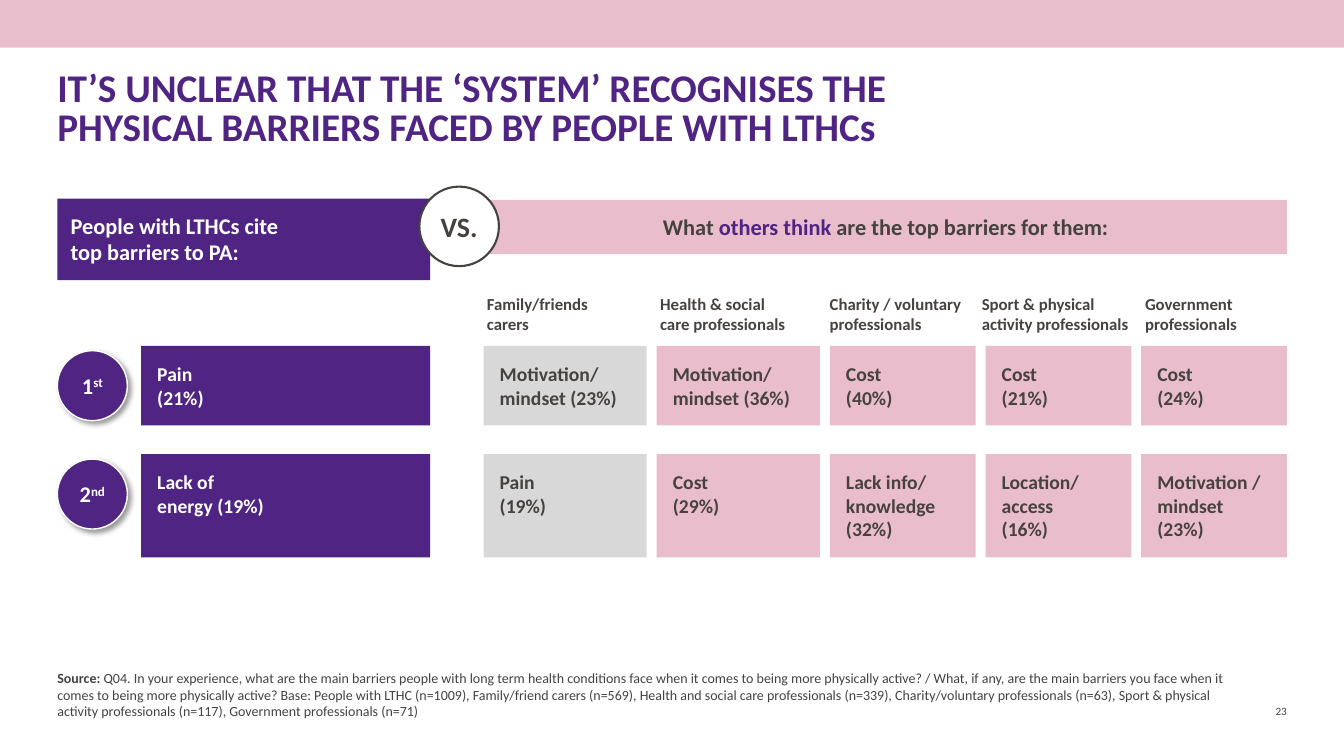
from lxml.etree import SubElement
from pptx import Presentation
from pptx.dml.color import RGBColor
from pptx.enum.shapes import MSO_SHAPE
from pptx.enum.text import MSO_ANCHOR, PP_ALIGN
from pptx.oxml.ns import qn
from pptx.util import Pt

PURPLE, PINK, BAND_PINK = "4F2483", "EABDCC", "E9BFCE"
GREY, DARK, WHITE = "D8D8D8", "464240", "FFFFFF"
FOOTER_DARK = "454341"
MARGIN, RIGHT = 41, 919.3
GAP = 7.1
COLUMNS_LEFT = 345.4
ROWS = [(247, 56.8), (324.4, 73.8)]

# heading, heading offset, heading width, column width, fill, answers.
# In text, \v is a line break and \n starts a paragraph.
COLUMNS = [
    ("Family/friends carers", 2.4, 83.5, 116.6, GREY,
     ["Motivation/ \vmindset (23%)", "Pain \v(19%)"]),
    ("Health & social \vcare professionals", 2.4, 116.6, 116.6, PINK,
     ["Motivation/ \vmindset (36%)", "Cost \v(29%)"]),
    ("Charity / voluntary professionals", -0.2, 116.6, 104.1, PINK,
     ["Cost \v(40%)", "Lack info/ knowledge (32%)"]),
    ("Sport & physical activity professionals", -2.7, 110.9, 104.1, PINK,
     ["Cost \v(21%)", "Location/\vaccess\n(16%)"]),
    ("Government professionals", 2.7, 83.5, 104.1, PINK,
     ["Cost \v(24%)", "Motivation / mindset (23%)"]),
]
RANKS = [("1", "st", "Pain \v(21%)"), ("2", "nd", "Lack of \venergy (19%)")]

SOURCE_NOTE = (
    "Q04. In your experience, what are the main barriers people with long term health "
    "conditions face when it comes to being more physically active? / What, if any, are the "
    "main barriers you face when it comes to being more physically active? Base: People with "
    "LTHC (n=1009), Family/friend carers (n=569), Health and social care professionals "
    "(n=339), Charity/voluntary professionals (n=63), Sport & physical activity professionals "
    "(n=117), Government professionals (n=71)"
)


def rgb(code):
    return RGBColor.from_string(code)


class Board:
    """The current page and the text style shared by its elements."""

    font_name = "Calibri"

    def __init__(self, page):
        self.page = page

    def set_text(self, shape, content, size, color, bold=True, align=PP_ALIGN.LEFT,
                 anchor=MSO_ANCHOR.TOP, inset=(0, 0), leading=None):
        """Fill a shape with a string, or with a list of (text, changes) spans."""
        frame = shape.text_frame
        frame.word_wrap = True
        frame.vertical_anchor = anchor
        frame.margin_left = frame.margin_right = Pt(inset[0])
        frame.margin_top = frame.margin_bottom = Pt(inset[1])
        if isinstance(content, str):
            frame.text = content
        else:
            for text, changes in content:
                self.add_span(frame.paragraphs[0], text, **changes)
        for para in frame.paragraphs:
            para.alignment = align
            para.line_spacing = leading
            font = para.font
            font.name, font.size, font.bold = self.font_name, Pt(size), bold
            font.color.rgb = rgb(color)

    def add_span(self, para, text, color=None, bold=None, raised=False):
        span = para.add_run()
        span.text = text
        span.font.bold = bold
        if color:
            span.font.color.rgb = rgb(color)
        if raised:
            span.font._element.set("baseline", "30000")

    def text(self, left, top, width, height, content, size, color, **style):
        box = self.page.shapes.add_textbox(Pt(left), Pt(top), Pt(width), Pt(height))
        self.set_text(box, content, size, color, **style)

    def shape(self, kind, left, top, width, height, fill):
        shape = self.page.shapes.add_shape(kind, Pt(left), Pt(top), Pt(width), Pt(height))
        shape.shadow.inherit = False
        shape.fill.solid()
        shape.fill.fore_color.rgb = rgb(fill)
        shape.line.fill.background()
        return shape

    def block(self, left, top, width, height, fill, content=None, size=14, color=DARK,
              **style):
        block = self.shape(MSO_SHAPE.RECTANGLE, left, top, width, height, fill)
        if content:
            self.set_text(block, content, size, color, **style)

    def circle(self, left, top, diameter, fill, outline, weight, content, size, color,
               inset, shadow=False):
        circle = self.shape(MSO_SHAPE.OVAL, left, top, diameter, diameter, fill)
        circle.line.color.rgb = rgb(outline)
        circle.line.width = Pt(weight)
        if shadow:
            self.cast_shadow(circle)
        self.set_text(circle, content, size, color, align=PP_ALIGN.CENTER,
                      anchor=MSO_ANCHOR.MIDDLE, inset=inset)

    def cast_shadow(self, shape):
        effects = shape._element.spPr.find(qn("a:effectLst"))
        outer = SubElement(effects, qn("a:outerShdw"), blurRad=str(Pt(4)), dist=str(Pt(3)),
                           dir="2700000", algn="tl", rotWithShape="0")
        tint = SubElement(outer, qn("a:srgbClr"), val="000000")
        SubElement(tint, qn("a:alpha"), val="40000")


def main():
    deck = Presentation()
    deck.slide_width, deck.slide_height = Pt(960), Pt(540)
    board = Board(deck.slides.add_slide(deck.slide_layouts[6]))

    board.block(0, 0, 960, 34, BAND_PINK)
    board.text(MARGIN, 51, 878, 57,
               "IT’S UNCLEAR THAT THE ‘SYSTEM’ RECOGNISES THE \v"
               "PHYSICAL BARRIERS FACED BY PEOPLE WITH LTHCs",
               28, PURPLE, leading=Pt(28))

    board.block(MARGIN, 141.8, 266.2, 58.3, PURPLE,
                "People with LTHCs cite \vtop barriers to PA:", 16, WHITE, inset=(9.4, 9.4))
    board.block(346, 142.7, RIGHT - 346, 38.8, PINK,
                [("What ", {}), ("others think ", {"color": PURPLE}),
                 ("are the top barriers for them:", {})],
                16, align=PP_ALIGN.CENTER, inset=(9.4, 9.4))
    board.circle(299.6, 133.3, 56.8, WHITE, DARK, 1.5, "VS.", 20, DARK, inset=(0, 3.6))

    for (top, height), (number, suffix, barrier) in zip(ROWS, RANKS):
        board.circle(MARGIN, top + 3.5, 50, PURPLE, WHITE, 1,
                     [(number, {}), (suffix, {"raised": True})],
                     16, WHITE, inset=(7.2, 3.6), shadow=True)
        board.block(100.8, top, 206.4, height, PURPLE, barrier, color=WHITE,
                    inset=(11.5, 11.5))

    left = COLUMNS_LEFT
    for heading, offset, heading_width, width, fill, answers in COLUMNS:
        board.text(left + offset, 209.5, heading_width, 29, heading, 12, DARK)
        for (top, height), answer in zip(ROWS, answers):
            board.block(left, top, width, height, fill, answer, inset=(11.5, 11.5))
        left += width + GAP

    board.text(MARGIN, 477.5, 849, 36.6, [("Source: ", {"bold": True}), (SOURCE_NOTE, {})],
               10, FOOTER_DARK, bold=False, anchor=MSO_ANCHOR.BOTTOM)
    board.text(RIGHT - 28, 503, 28, 9.8, "23", 8, FOOTER_DARK, bold=False,
               align=PP_ALIGN.RIGHT, anchor=MSO_ANCHOR.BOTTOM)

    deck.save("out.pptx")


if __name__ == "__main__":
    main()
